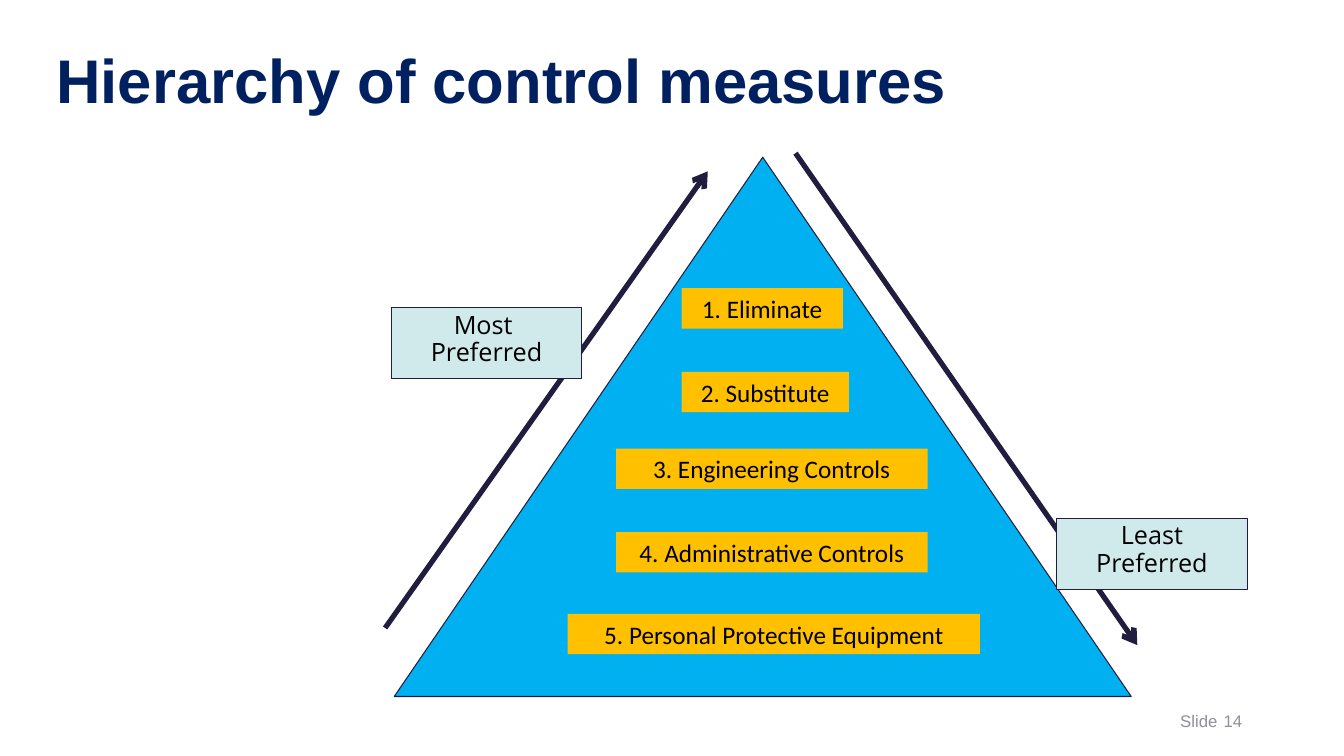
from dataclasses import dataclass

from lxml import etree
from pptx import Presentation
from pptx.dml.color import RGBColor
from pptx.enum.shapes import MSO_CONNECTOR, MSO_SHAPE
from pptx.enum.text import MSO_ANCHOR, MSO_AUTO_SIZE, PP_ALIGN
from pptx.oxml.ns import qn
from pptx.util import Inches, Pt

STRAIGHT = MSO_CONNECTOR.STRAIGHT
RECT, TRIANGLE = MSO_SHAPE.RECTANGLE, MSO_SHAPE.ISOSCELES_TRIANGLE
TOP, MIDDLE = MSO_ANCHOR.TOP, MSO_ANCHOR.MIDDLE
GROW, FIXED = MSO_AUTO_SIZE.SHAPE_TO_FIT_TEXT, MSO_AUTO_SIZE.NONE
LEFT, CENTER, RIGHT = PP_ALIGN.LEFT, PP_ALIGN.CENTER, PP_ALIGN.RIGHT

WIDTH, HEIGHT = Inches(13.33), Inches(7.5)
ROWS = 75
CELL = HEIGHT / ROWS
TITLE_ONLY = 5

TITLE_BOX = (4.6, 5.1, 128.2, 6.9)
FOOTER_BOX = (94.2, 69.5, 30, 4)
PYRAMID_BOX = (39.1, 15.6, 73.1, 53.5)

BAR_HEIGHT = 4
BARS = [
    ("1. Eliminate", 28.5, 13, 16),
    ("2. Substitute", 28.5, 21.3, 16.6),
    ("3. Engineering Controls", 22, 28.9, 30.9),
    ("4. Administrative Controls", 22, 37.2, 30.9),
    ("5. Personal Protective Equipment", 17.2, 45.3, 40.9),
]
ARROWS = [((39.8, -0.4), (73.7, 48.4)), ((-0.9, 46.7), (31.1, 1.4))]
TAG_SIZE = (18.9, 7.1)
TAGS = [("Most \nPreferred", -0.3, 14.9), ("Least\nPreferred", 65.7, 35.8)]


@dataclass(frozen=True)
class Theme:
    navy: RGBColor = RGBColor.from_string("002060")
    grey: RGBColor = RGBColor.from_string("8F8F9E")
    ink: RGBColor = RGBColor.from_string("201D3E")
    sky: RGBColor = RGBColor.from_string("00B0F0")
    amber: RGBColor = RGBColor.from_string("FFC000")
    mint: RGBColor = RGBColor.from_string("D0EAEC")
    black: RGBColor = RGBColor.from_string("000000")
    outline: Pt = Pt(0.75)
    arrow: Pt = Pt(3.75)
    title_font = {"name": "Arial", "size": Pt(44), "bold": True}
    footer_font = {"name": "Arial", "size": Pt(12)}
    bar_font = {"name": "Calibri", "size": Pt(18)}
    tag_font = {"name": "Open Sans", "size": Pt(18)}


THEME = Theme()


def grid(*cells):
    return [round(c * CELL) for c in cells]


def set_all(target, values):
    for name, value in values.items():
        setattr(target, name, value)


def write(sp, text, font, color, align, anchor=TOP, fit=GROW, spacing=1.0):
    tf = sp.text_frame
    tf.text = text
    set_all(tf, {"word_wrap": True, "vertical_anchor": anchor, "auto_size": fit})
    for p in tf.paragraphs:
        set_all(p, {"alignment": align, "line_spacing": spacing})
        for r in p.runs:
            set_all(r.font, font)
            r.font.color.rgb = color


def add_block(s, kind, box, fill, outlined):
    sp = s.shapes.add_shape(kind, *grid(*box))
    sp.shadow.inherit = False
    sp.fill.solid()
    sp.fill.fore_color.rgb = fill
    if outlined:
        sp.line.color.rgb = THEME.ink
        sp.line.width = THEME.outline
    else:
        sp.line.fill.background()
    return sp


def add_arrow(s, start, end):
    line = s.shapes.add_connector(STRAIGHT, *grid(*start, *end))
    line.line.color.rgb = THEME.ink
    line.line.width = THEME.arrow
    etree.SubElement(line.line._get_or_add_ln(), qn("a:tailEnd"), type="arrow")
    etree.SubElement(line._element.spPr, qn("a:effectLst"))


def add_title(s, box):
    title = s.shapes.title
    set_all(title, dict(zip(("left", "top", "width", "height"), grid(*box))))
    write(title, "Hierarchy of control measures", THEME.title_font, THEME.navy,
          LEFT, spacing=0.8)


def add_footer(s, box):
    x, y, w, h = box
    label_offset, label_width = 19.5, 10.4
    parts = [("Slide", x + label_offset, label_width, CENTER), ("14", x, w, RIGHT)]
    for text, left, width, align in parts:
        sp = s.shapes.add_textbox(*grid(left, y, width, h))
        write(sp, text, THEME.footer_font, THEME.grey, align, MIDDLE, FIXED)


def add_pyramid(s, box):
    x, y = box[:2]
    for start, end in ARROWS:
        add_arrow(s, (x + start[0], y + start[1]), (x + end[0], y + end[1]))
    add_block(s, TRIANGLE, box, THEME.sky, True)
    for text, dx, dy, width in BARS:
        bar = add_block(s, RECT, (x + dx, y + dy, width, BAR_HEIGHT), THEME.amber, False)
        write(bar, text, THEME.bar_font, THEME.black, CENTER)
    for text, dx, dy in TAGS:
        tag = add_block(s, RECT, (x + dx, y + dy, *TAG_SIZE), THEME.mint, True)
        write(tag, text, THEME.tag_font, THEME.black, CENTER, spacing=0.9)


def main():
    prs = Presentation()
    set_all(prs, {"slide_width": WIDTH, "slide_height": HEIGHT})
    s = prs.slides.add_slide(prs.slide_layouts[TITLE_ONLY])
    add_title(s, TITLE_BOX)
    add_footer(s, FOOTER_BOX)
    add_pyramid(s, PYRAMID_BOX)
    prs.save("out.pptx")


if __name__ == "__main__":
    main()
